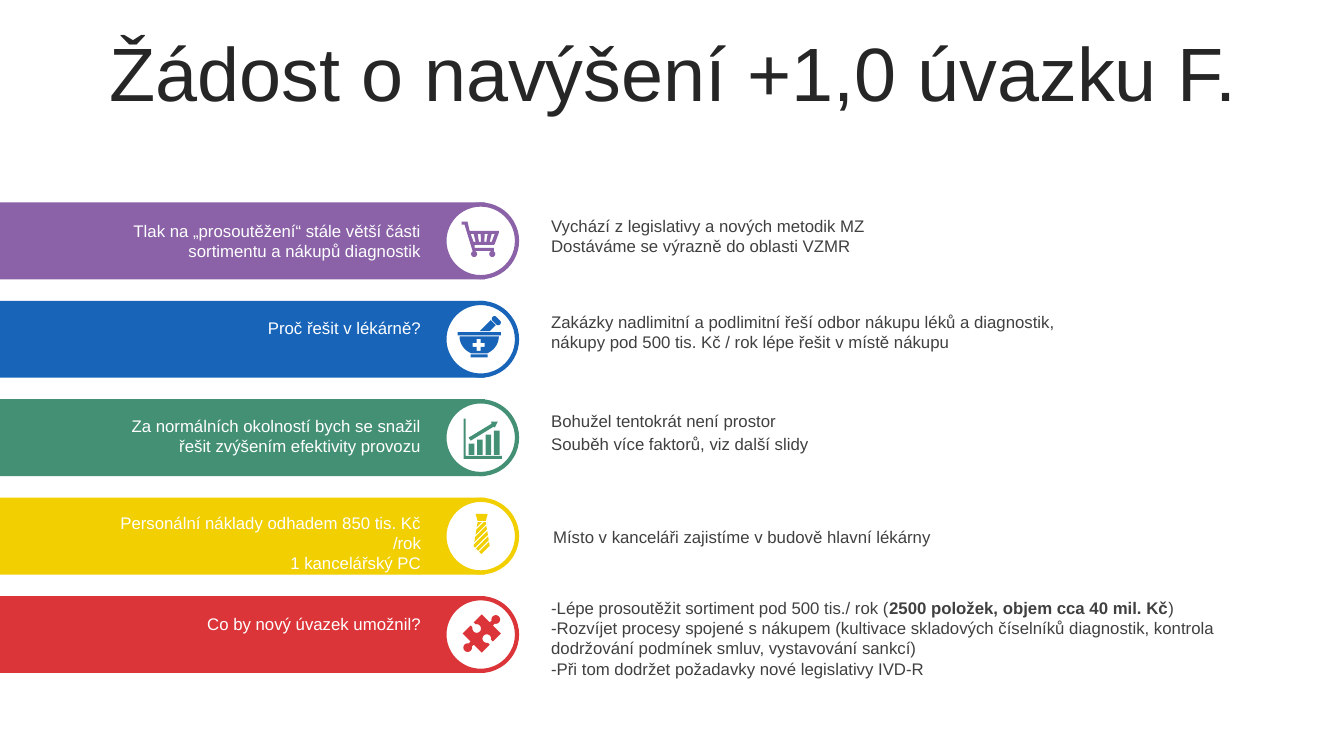
import math
from dataclasses import dataclass

from pptx import Presentation
from pptx import util as u
from pptx.dml import color
from pptx.enum import shapes, text

Point = tuple[float, float]
Part = list[Point]  # one closed contour of an icon

FONT = "Arial"
WHITE, GREY, DARK = "FFFFFF", "404040", "262626"
TOP, STEP = 5.1, 2.48  # first bar and pitch, cm
BAR_W, BAR_H = 12.22, 1.94
RING_X, RING_D = 11.2, 1.83
GRID = 0.0254  # one icon unit in cm; icons are centred on 0, 0 in the ring
FINE = 100  # steps per icon unit


@dataclass
class Note:
    x: float
    y: float
    w: float
    h: float
    lines: list[str]  # **marks** bold


@dataclass
class Row:
    hue: str
    icon: list[Part]
    label: Note
    notes: list[Note]


def box(x: float, y: float, w: float, h: float) -> Part:
    return [(x, y), (x + w, y), (x + w, y + h), (x, y + h)]


def arc(x: float, y: float, rx: float, ry: float, start: float, end: float) -> Part:
    """Points of an ellipse round x, y; degrees run clockwise from the right."""
    turns = [math.radians(start + (end - start) * k / 16) for k in range(17)]
    return [(x + rx * math.cos(t), y + ry * math.sin(t)) for t in turns]


def disc(x: float, y: float, r: float) -> Part:
    return arc(x, y, r, r, 0, 360)


def spin(part: Part, angle: float) -> Part:
    c, s = math.cos(math.radians(angle)), math.sin(math.radians(angle))
    return [(x * c - y * s, x * s + y * c) for x, y in part]


def move(part: Part, dx: float, dy: float) -> Part:
    return [(x + dx, y + dy) for x, y in part]


def clip(part: Part, sign: int, edge: float) -> Part:
    """Keep the side of the diagonal x + y = edge where sign * (x + y - edge) >= 0."""
    kept = []
    for (ax, ay), (bx, by) in zip(part, part[1:] + part[:1]):
        a, b = sign * (ax + ay - edge), sign * (bx + by - edge)
        if a >= 0:
            kept.append((ax, ay))
        if a * b < 0:
            t = a / (a - b)
            kept.append((ax + t * (bx - ax), ay + t * (by - ay)))
    return kept


def cart() -> list[Part]:
    frame = [(-19, -19), (-13, -19), (-11, -10), (18, -10), (18, -8), (14, 3), (13, 4),
             (-6, 4), (-6, 7), (13, 7), (13, 10), (-8, 10), (-16, -16), (-19, -16)]
    slots = [[(7 * k - 10, -7), (7 * k - 7, -7), (5.3 * k - 5, 1), (5.3 * k - 7, 1)]
             for k in range(4)]
    wheels = [disc(x, 13, 3) for x in (-6.5, 11.5)]
    return [frame, *slots, *wheels]


def mortar() -> list[Part]:
    rim, foot = box(-23, -7, 43, 3), box(-10, 15, 17, 3)
    bowl = arc(-1.5, -3, 19.5, 18.5, 0, 67) + arc(-1.5, -3, 19.5, 18.5, 113, 180)
    arm = [(-2, -6), (2, -6), (2, -2)]
    cross = [p for k in range(4) for p in spin(arm, 90 * k)]
    stick = [(10, -19), (15, -14), (9, -8), (-1, -8)]
    knob = arc(13.7, -20.3, 2.7, 2.7, 135, 315) + arc(17.3, -16.7, 2.7, 2.7, -45, 135)
    return [rim, foot, bowl, move(cross, -2, 5.5), stick, knob]


def graph() -> list[Part]:
    axes = [(-17, -19), (-15, -19), (-15, 18), (21, 18), (21, 21), (-17, 21)]
    arrow = [(10, -16), (17, -16), (14, -10), (13, -11), (-10, 3), (-12, 0), (11, -14)]
    bars = [box(8.4 * k - 12, 17 - h, 5.6, h) for k, h in enumerate((11, 15, 20, 24))]
    return [axes, arrow, *bars]


def tie() -> list[Part]:
    """A knot over a blade that is cut into diagonal stripes."""
    knot = [(-5, -22), (7, -22), (5, -15), (-3, -15)]
    blade = [(-3, -14), (5, -14), (9, 10), (1, 18), (-7, 10)]
    starts = [6.2 * k - 17 for k in range(6)]
    return [knot] + [clip(clip(blade, 1, s), -1, s + 4.3) for s in starts]


def puzzle() -> list[Part]:
    """A square on its corner whose four sides bear a tab, in turn out and in."""
    half = 13.4
    tab = arc(0, 6.3, 4.3, 4.3, 240, -60)
    outline = []
    for k in range(4):
        way = 1 if k % 2 == 0 else -1
        side = [(-half, 0), (-2.15, 0), *tab, (2.15, 0)]
        side = [(x, half + way * y) for x, y in side]
        outline += spin(side, 45 - 90 * k)
    return [move(outline, 1, -1)]


ROWS = [
    Row("8B62A8", cart(), Note(2.86, 5.44, 8, 1.27, [
        "Tlak na „prosoutěžení“ stále větší části sortimentu a nákupů diagnostik"]),
        [Note(13.64, 5.31, 14.58, 1.8, ["Vychází z legislativy a nových metodik MZ",
                                        "Dostáváme se výrazně do oblasti VZMR"])]),
    Row("1764B9", mortar(), Note(2.86, 7.88, 8, 0.76, ["Proč řešit v lékárně?"]),
        [Note(13.64, 7.73, 14.53, 1.8, [
            "Zakázky nadlimitní a podlimitní řeší odbor nákupu léků a diagnostik, "
            "nákupy pod 500 tis. Kč / rok lépe řešit v místě nákupu"])]),
    Row("449074", graph(), Note(2.86, 10.34, 8, 1.27, [
        "Za normálních okolností bych se snažil řešit zvýšením efektivity provozu"]),
        [Note(13.64, 10.22, 7.8, 0.76, ["Bohužel tentokrát není prostor"]),
         Note(13.64, 10.8, 7.8, 0.76, ["Souběh více faktorů, viz další slidy"])]),
    Row("F1CF01", tie(), Note(1.97, 12.8, 8.89, 1.27, [
        "Personální náklady odhadem 850 tis. Kč /rok", "1 kancelářský PC"]),
        [Note(13.69, 13.15, 10.74, 1.27, ["Místo v kanceláři zajistíme v budově hlavní lékárny"])]),
    Row("DC3539", puzzle(), Note(2.86, 15.34, 8, 0.76, ["Co by nový úvazek umožnil?"]),
        [Note(13.64, 14.94, 18.34, 2.82, [
            "-Lépe prosoutěžit sortiment pod 500 tis./ rok (**2500 položek, objem cca 40 mil. Kč**)",
            "-Rozvíjet procesy spojené s nákupem (kultivace skladových číselníků diagnostik, "
            "kontrola dodržování podmínek smluv, vystavování sankcí)",
            "-Při tom dodržet požadavky nové legislativy IVD-R"])]),
]


def rgb(code: str) -> color.RGBColor:
    return color.RGBColor.from_string(code)


def put(item, form: dict) -> None:
    """Set each named attribute of the item."""
    for name, value in form.items():
        setattr(item, name, value)


def paint(shape, fill: str, line: str = "") -> None:
    shape.shadow.inherit = False
    shape.fill.solid()
    shape.fill.fore_color.rgb = rgb(fill)
    if line:
        shape.line.color.rgb = rgb(line)
        shape.line.width = u.Pt(3)
    else:
        shape.line.fill.background()


def write(slide, note: Note, hue: str, size: float, para: dict, frame: dict) -> None:
    area = slide.shapes.add_textbox(*map(u.Cm, (note.x, note.y, note.w, note.h)))
    body = area.text_frame
    put(body, {"word_wrap": True, **frame})
    for i, line in enumerate(note.lines):
        par = body.paragraphs[0] if i == 0 else body.add_paragraph()
        put(par, para)
        for j, piece in enumerate(line.split("**")):
            run = par.add_run()
            run.text = piece
            put(run.font, {"name": FONT, "size": u.Pt(size), "bold": j % 2 == 1})
            run.font.color.rgb = rgb(hue)


def draw(slide, parts: list[Part], x: float, y: float, hue: str) -> None:
    """Join the contours into one icon centred on x, y."""
    parts = [[(px * FINE, py * FINE) for px, py in part] for part in parts]
    pen = slide.shapes.build_freeform(*parts[0][0], scale=u.Cm(1) * GRID / FINE)
    for i, part in enumerate(parts):
        if i:
            pen.move_to(*part[0])
        pen.add_line_segments(part[1:], close=True)
    paint(pen.convert_to_shape(u.Cm(x), u.Cm(y)), hue)


def main() -> None:
    deck = Presentation()
    put(deck, {"slide_width": u.Cm(33.87), "slide_height": u.Cm(19.05)})
    slide = deck.slides.add_slide(deck.slide_layouts[6])
    write(slide, Note(0.89, 0.94, 32.16, 2.01, ["Žádost o navýšení +1,0 úvazku F."]), DARK, 54,
          {"alignment": text.PP_ALIGN.CENTER, "line_spacing": 0.9, "space_before": u.Pt(10)},
          {"vertical_anchor": text.MSO_ANCHOR.MIDDLE})
    grow = {"auto_size": text.MSO_AUTO_SIZE.SHAPE_TO_FIT_TEXT}
    kinds = shapes.MSO_SHAPE
    for i, row in enumerate(ROWS):
        top = TOP + i * STEP
        mid = top + BAR_H / 2
        bar = slide.shapes.add_shape(kinds.RECTANGLE, *map(u.Cm, (0, top, BAR_W, BAR_H)))
        paint(bar, row.hue)
        ring = slide.shapes.add_shape(
            kinds.OVAL, *map(u.Cm, (RING_X, mid - RING_D / 2, RING_D, RING_D)))
        paint(ring, WHITE, row.hue)
        draw(slide, row.icon, RING_X + RING_D / 2, mid, row.hue)
        write(slide, row.label, WHITE, 12, {"alignment": text.PP_ALIGN.RIGHT}, grow)
        for note in row.notes:
            write(slide, note, GREY, 12, {"alignment": text.PP_ALIGN.LEFT}, grow)
    deck.save("out.pptx")


if __name__ == "__main__":
    main()
